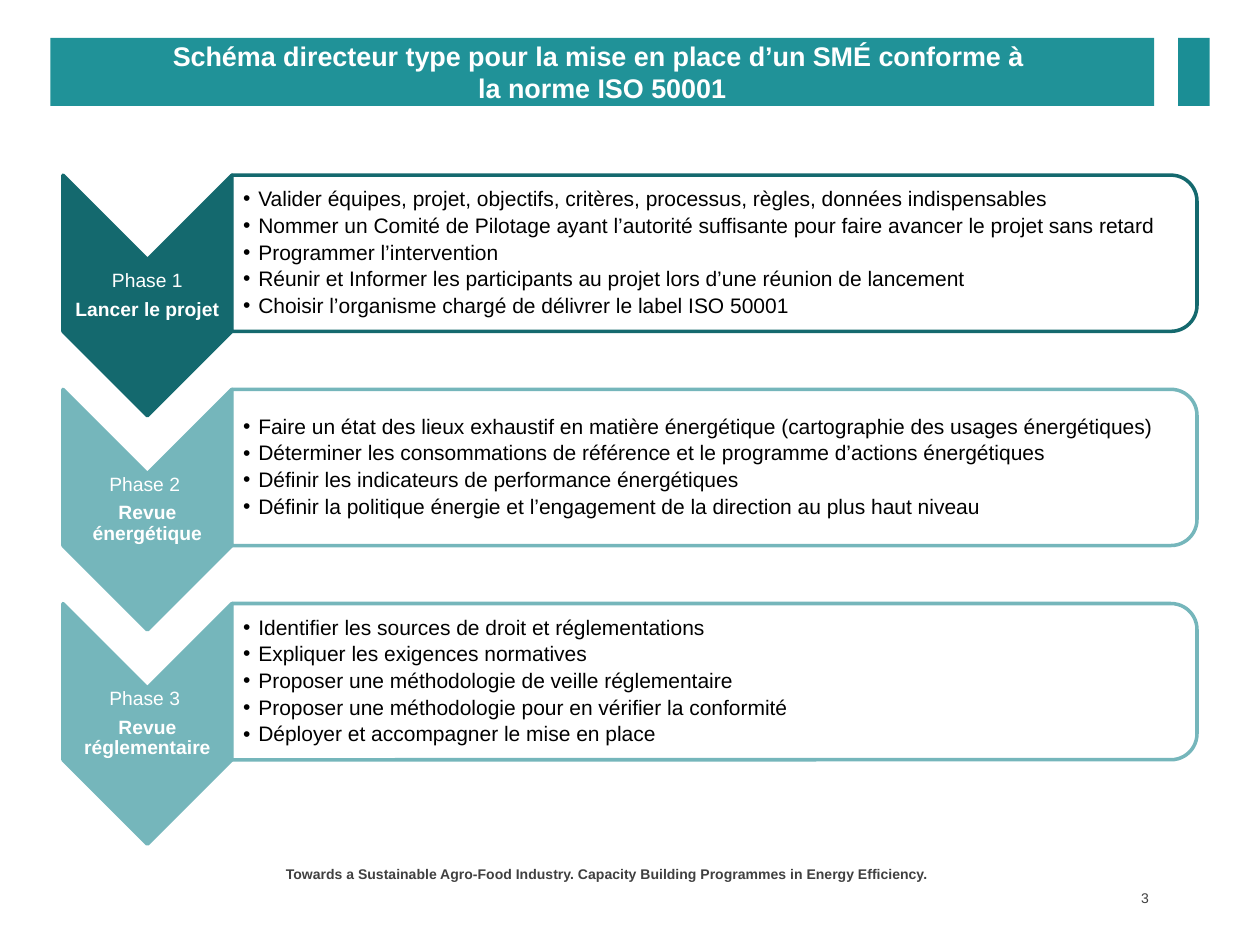
from lxml.etree import SubElement
from pptx import Presentation
from pptx.dml.color import RGBColor
from pptx.enum.shapes import MSO_SHAPE as Shape
from pptx.enum.text import MSO_ANCHOR as Anchor, PP_ALIGN as Align
from pptx.oxml.ns import qn
from pptx.util import Inches, Pt

BANNER = RGBColor(0x20, 0x92, 0x98)
TAB = RGBColor(0x1B, 0x8E, 0x95)
DARK_TEAL = RGBColor(0x14, 0x69, 0x6E)
LIGHT_TEAL = RGBColor(0x75, 0xB6, 0xBB)
WHITE = RGBColor(0xFF, 0xFF, 0xFF)
BLACK = RGBColor(0, 0, 0)
GREY = RGBColor(0x40, 0x40, 0x40)

SLIDE_W, SLIDE_H = 10, 7.5
MARGIN = 0.05 * SLIDE_W
ROW_TOP, ROW_PITCH = 1.39, 1.7
CHEVRON_W, CHEVRON_H = 1.34, 1.91
PANEL_W, PANEL_H = 7.66, 1.24

PHASES = [
    ("Phase 1", "Lancer le projet", DARK_TEAL, [
        "Valider équipes, projet, objectifs, critères, processus, règles, données indispensables",
        "Nommer un Comité de Pilotage ayant l’autorité suffisante pour faire avancer le projet sans retard",
        "Programmer l’intervention",
        "Réunir et Informer les participants au projet lors d’une réunion de lancement",
        "Choisir l’organisme chargé de délivrer le label ISO 50001",
    ]),
    ("Phase 2 ", "Revue énergétique", LIGHT_TEAL, [
        "Faire un état des lieux exhaustif en matière énergétique (cartographie des usages énergétiques)",
        "Déterminer les consommations de référence et le programme d’actions énergétiques",
        "Définir les indicateurs de performance énergétiques",
        "Définir la politique énergie et l’engagement de la direction au plus haut niveau",
    ]),
    ("Phase 3 ", "Revue réglementaire", LIGHT_TEAL, [
        "Identifier les sources de droit et réglementations",
        "Expliquer les exigences normatives",
        "Proposer une méthodologie de veille réglementaire",
        "Proposer une méthodologie pour en vérifier la conformité",
        "Déployer et accompagner le mise en place",
    ]),
]


def style(target, **values):
    for name, value in values.items():
        setattr(target, name, value)


def add_block(slide, preset, box, fill, line=None, turned=False):
    """Draw a preset in box; a turned one is rotated 90° and still fills box."""
    left, top, width, height = box
    if turned:
        left, top = left + (width - height) / 2, top + (height - width) / 2
        width, height = height, width
    block = slide.shapes.add_shape(preset, *map(Inches, (left, top, width, height)))
    block.rotation = 90 if turned else 0
    block.shadow.inherit = False
    block.fill.solid()
    block.fill.fore_color.rgb = fill
    if line is None:
        block.line.fill.background()
    else:
        block.line.color.rgb = line
        block.line.width = Pt(2)
    return block


def add_bullet(paragraph, indent):
    properties = paragraph._p.get_or_add_pPr()
    properties.set("marL", str(Inches(indent)))
    properties.set("indent", str(-Inches(indent)))
    SubElement(properties, qn("a:buFont")).set("typeface", "Arial")
    SubElement(properties, qn("a:buChar")).set("char", "•")


def write(frame, lines, size, color, insets, align=Align.LEFT, bold=(),
          anchor=Anchor.MIDDLE, bullets=False, **spacing):
    """Fill frame with one paragraph a line; bold holds the bold line indexes."""
    left, top, right, bottom = map(Inches, insets)
    style(frame, word_wrap=True, vertical_anchor=anchor, margin_left=left,
          margin_top=top, margin_right=right, margin_bottom=bottom)
    for index, line in enumerate(lines):
        paragraph = frame.paragraphs[0] if index == 0 else frame.add_paragraph()
        paragraph.text = line
        style(paragraph, alignment=align, **spacing)
        if bullets:
            add_bullet(paragraph, 0.12)
        style(paragraph.font, name="Arial", size=Pt(size), bold=index in bold)
        paragraph.font.color.rgb = color


def add_text(slide, box, *args, **kwargs):
    write(slide.shapes.add_textbox(*map(Inches, box)).text_frame, *args, **kwargs)


def header(slide, left, top, width, height):
    gap, tab_w = 0.19, 0.25
    banner_w = width - gap - tab_w
    banner = add_block(slide, Shape.RECTANGLE, (left, top, banner_w, height), BANNER)
    write(banner.text_frame,
          ["Schéma directeur type pour la mise en place d’un SMÉ conforme à \vla norme ISO 50001"],
          15.4, WHITE, (0.1, 0.05, 0.1, 0.05), Align.CENTER, bold=(0,))
    add_block(slide, Shape.RECTANGLE, (left + width - tab_w, top, tab_w, height), TAB)


def phase_row(slide, left, top, phase, title, color, tasks):
    add_block(slide, Shape.CHEVRON, (left, top, CHEVRON_W, CHEVRON_H), color, color, turned=True)
    notch = CHEVRON_W / 2
    add_text(slide, (left, top + notch, CHEVRON_W, CHEVRON_H - 2 * notch),
             [phase, title], 11, WHITE, (0.01,) * 4, Align.CENTER, bold=(1,),
             line_spacing=0.9, space_after=Pt(4.6))

    panel_left = left + CHEVRON_W
    panel = add_block(slide, Shape.ROUND_2_SAME_RECTANGLE,
                      (panel_left, top, PANEL_W, PANEL_H), WHITE, color, turned=True)
    fill_color = panel.fill._xPr.find(qn("a:solidFill"))[0]
    SubElement(fill_color, qn("a:alpha")).set("val", "90000")
    pad = 0.06
    add_text(slide, (panel_left, top + pad, PANEL_W - pad, PANEL_H - 2 * pad),
             tasks, 12, BLACK, (0.09, 0.01, 0.01, 0.01), bullets=True,
             line_spacing=0.9, space_after=Pt(2.3))


def footer(slide, top):
    add_text(slide, (2.17, top, 5.5, 0.21),
             ["Towards a Sustainable Agro-Food Industry. Capacity Building Programmes in Energy Efficiency."],
             8, GREY, (0.1, 0.05, 0.1, 0.05), bold=(0,), anchor=Anchor.TOP)
    add_text(slide, (8.6, top + 0.21, 0.56, 0.2), ["3"],
             8, GREY, (0.1, 0.05, 0.04, 0.05), Align.RIGHT)


def main():
    deck = Presentation()
    style(deck, slide_width=Inches(SLIDE_W), slide_height=Inches(SLIDE_H))
    slide = deck.slides.add_slide(deck.slide_layouts[6])
    footer(slide, 6.82)
    for row, phase in enumerate(PHASES):
        phase_row(slide, MARGIN, ROW_TOP + row * ROW_PITCH, *phase)
    header(slide, 0.4, 0.3, 9.2, 0.54)
    deck.save("out.pptx")


if __name__ == "__main__":
    main()
